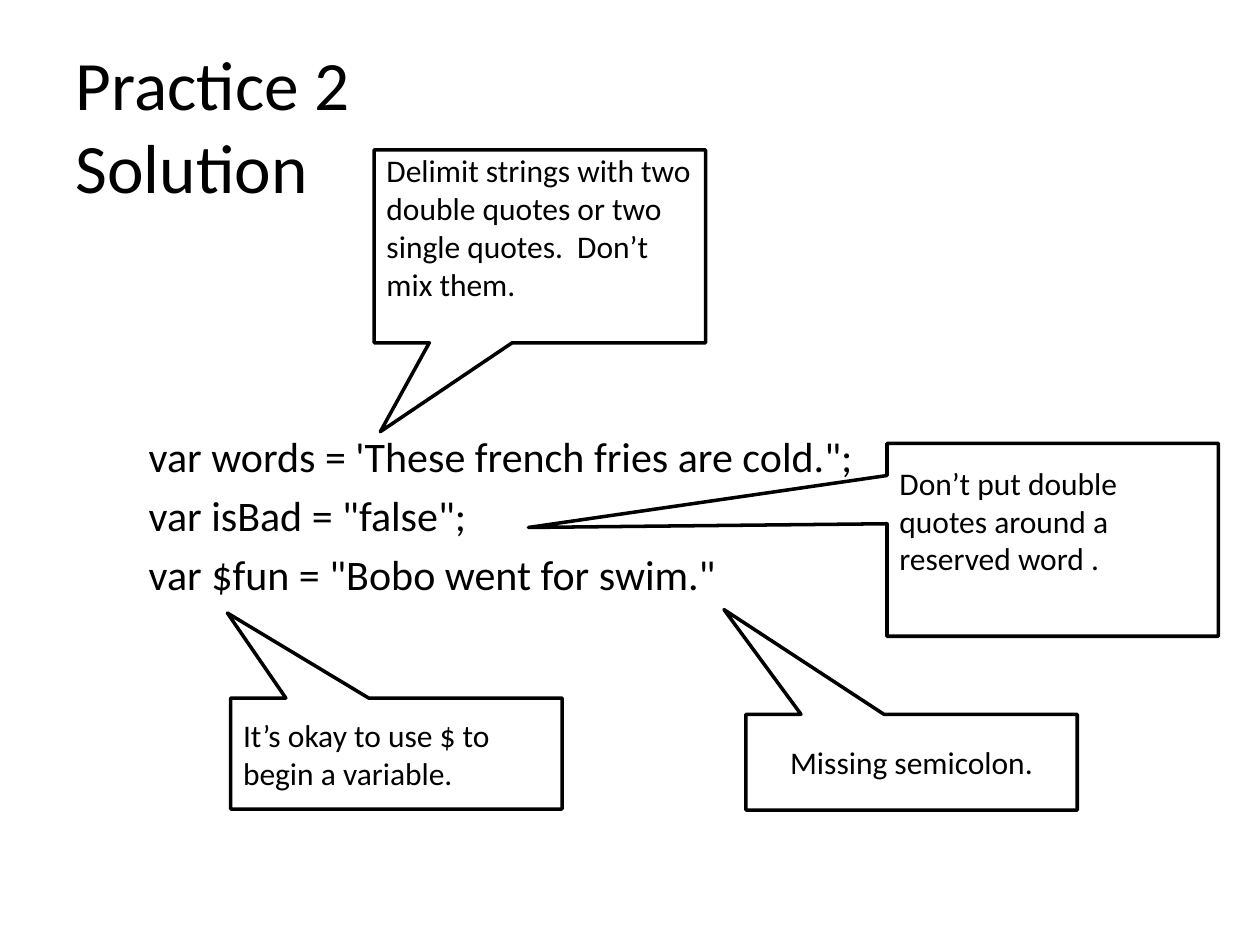
"""Build the Practice 2 solution slide with annotated code."""
from dataclasses import dataclass

import pptx
import pptx.dml.color
import pptx.enum.shapes
import pptx.enum.text
import pptx.util

Pt = pptx.util.Pt
Align = pptx.enum.text.PP_ALIGN
Anchor = pptx.enum.text.MSO_ANCHOR
FONT = "Calibri"
BLACK = "000000"
WHITE = "FFFFFF"
CALLOUT_WIDTH = 189.4
LINE_HEIGHT = 22


@dataclass
class Callout:
    text: str
    left: float
    top: float
    height: float
    tip: tuple[float, float]
    spare_lines: int = 0
    align: Align = Align.LEFT


CODE = [
    "var words = 'These french fries are cold.\";",
    'var isBad = "false";',
    'var $fun = "Bobo went for swim."',
]
CALLOUTS = [
    Callout("Delimit strings with two double quotes or two single quotes.  Don’t mix them.",
            213.8, 85.7, 110.2, (-0.481, 0.961), spare_lines=1),
    Callout("Don’t put double quotes around a reserved word .",
            506.9, 253.4, 110.2, (-1.582, -0.064), spare_lines=1),
    Callout("It’s okay to use $ to begin a variable.",
            131.8, 398.9, 63.4, (-0.51, -1.267)),
    Callout("Missing semicolon.",
            426.2, 408.2, 54.7, (-0.566, -1.594), align=Align.CENTER),
]


def color(code: str) -> pptx.dml.color.RGBColor:
    return pptx.dml.color.RGBColor.from_string(code)


def format_text(frame, size: float, align: Align, anchor: Anchor, space_after: float = 0) -> None:
    frame.word_wrap = True
    frame.auto_size = pptx.enum.text.MSO_AUTO_SIZE.NONE
    frame.vertical_anchor = anchor
    for para in frame.paragraphs:
        para.alignment = align
        para.space_after = Pt(space_after)
        for span in para.runs:
            span.font.name = FONT
            span.font.size = Pt(size)
            span.font.color.rgb = color(BLACK)


def add_title(page, text: str) -> None:
    title = page.shapes.title
    title.left, title.top, title.width, title.height = Pt(36), Pt(23), Pt(648), Pt(96.5)
    title.text_frame.text = text
    format_text(title.text_frame, 39.6, Align.LEFT, Anchor.MIDDLE)


def add_code(page, lines: list[str]) -> None:
    box = page.shapes.add_textbox(Pt(14.4), Pt(198), Pt(535.7), Pt(178.6))
    frame = box.text_frame
    frame.text = "\n".join(lines)
    frame.margin_left = Pt(70.6)
    frame.margin_top = Pt(48)
    format_text(frame, 24, Align.LEFT, Anchor.TOP, space_after=4.8)


def add_callout(page, callout: Callout) -> None:
    box = page.shapes.add_shape(
        pptx.enum.shapes.MSO_SHAPE.RECTANGULAR_CALLOUT,
        Pt(callout.left), Pt(callout.top), Pt(CALLOUT_WIDTH), Pt(callout.height))
    box.adjustments[0], box.adjustments[1] = callout.tip
    box.shadow.inherit = False
    box.fill.solid()
    box.fill.fore_color.rgb = color(WHITE)
    box.line.color.rgb = color(BLACK)
    box.line.width = Pt(2)
    frame = box.text_frame
    frame.text = callout.text
    frame.margin_bottom = Pt(3.6 + LINE_HEIGHT * callout.spare_lines)
    format_text(frame, 18, callout.align, Anchor.MIDDLE)


def main() -> None:
    deck = pptx.Presentation()
    deck.slide_width, deck.slide_height = Pt(720), Pt(540)
    page = deck.slides.add_slide(deck.slide_layouts.get_by_name("Title Only"))
    add_title(page, "Practice 2 \vSolution")
    add_code(page, CODE)
    for callout in CALLOUTS:
        add_callout(page, callout)
    deck.save("out.pptx")


if __name__ == "__main__":
    main()
